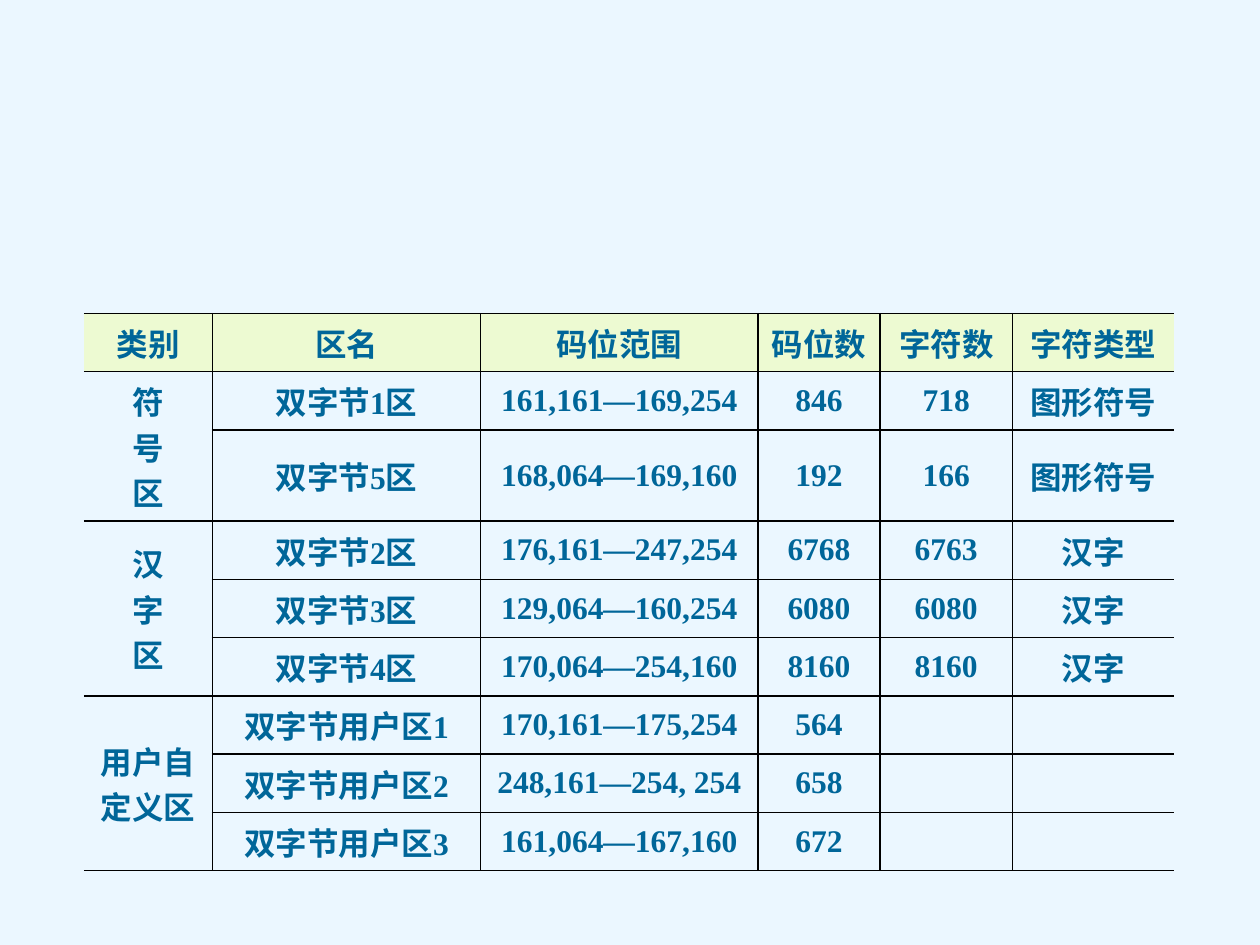
from lxml.etree import SubElement
from pptx import Presentation
from pptx.dml.color import RGBColor
from pptx.enum.text import MSO_ANCHOR, PP_ALIGN
from pptx.oxml.ns import qn
from pptx.util import Cm, Pt

BACKGROUND = RGBColor(0xEB, 0xF7, 0xFF)
HEADER_FILL = RGBColor(0xED, 0xFA, 0xD2)
TEXT_COLOR = RGBColor(0x00, 0x66, 0x99)
LINE_COLOR = RGBColor(0x00, 0x00, 0x00)
FONT_NAME = "Times New Roman"

COLUMN_WIDTHS = [2.59, 5.41, 5.59, 2.46, 2.67, 3.25]
ROW_HEIGHT = 1.01
TALL_ROW, TALL_ROW_HEIGHT = 2, 1.52
HANGING_INDENT = Cm(0.95)

HEADERS = ["类别", "区名", "码位范围", "码位数", "字符数", "字符类型"]
# Each category: its lines of text, then the zones that it spans.
CATEGORIES = [
    (["符", "号", "区"], [
        ["双字节1区", "161,161—169,254", "846", "718", "图形符号"],
        ["双字节5区", "168,064—169,160", "192", "166", "图形符号"],
    ]),
    (["汉", "字", "区"], [
        ["双字节2区", "176,161—247,254", "6768", "6763", "汉字"],
        ["双字节3区", "129,064—160,254", "6080", "6080", "汉字"],
        ["双字节4区", "170,064—254,160", "8160", "8160", "汉字"],
    ]),
    (["用户自", "定义区"], [
        ["双字节用户区1", "170,161—175,254", "564", "", ""],
        ["双字节用户区2", "248,161—254, 254", "658", "", ""],
        ["双字节用户区3", "161,064—167,160", "672", "", ""],
    ]),
]


def add_border(cell, side, visible):
    properties = cell._tc.get_or_add_tcPr()
    line = SubElement(properties, qn(f"a:ln{side}"), w=str(Pt(1)))
    if visible:
        fill = SubElement(line, qn("a:solidFill"))
        SubElement(fill, qn("a:srgbClr"), val=str(LINE_COLOR))
    else:
        SubElement(line, qn("a:noFill"))


def write_lines(cell, lines):
    """Write one centred paragraph per line of text."""
    cell.vertical_anchor = MSO_ANCHOR.MIDDLE
    text_frame = cell.text_frame
    for index, text in enumerate(lines):
        paragraph = text_frame.add_paragraph() if index else text_frame.paragraphs[0]
        paragraph.alignment = PP_ALIGN.CENTER
        properties = paragraph._p.get_or_add_pPr()
        properties.set("marL", str(HANGING_INDENT))
        properties.set("indent", str(-HANGING_INDENT))
        run = paragraph.add_run()
        run.text = text
        run.font.name = FONT_NAME
        run.font.size = Pt(18)
        run.font.bold = True
        run.font.color.rgb = TEXT_COLOR


def format_cells(table):
    """Rule every cell, leaving the table's left and right sides open."""
    last_column = len(table.columns) - 1
    for row_index, row in enumerate(table.rows):
        for column_index, cell in enumerate(row.cells):
            add_border(cell, "L", column_index > 0)
            add_border(cell, "R", column_index < last_column)
            add_border(cell, "T", True)
            add_border(cell, "B", True)
            if row_index == 0:
                cell.fill.solid()
                cell.fill.fore_color.rgb = HEADER_FILL
            else:
                cell.fill.background()


def fill_table(table):
    for column, header in enumerate(HEADERS):
        write_lines(table.cell(0, column), [header])
    row = 1
    for category_lines, zones in CATEGORIES:
        category_cell = table.cell(row, 0)
        category_cell.merge(table.cell(row + len(zones) - 1, 0))
        write_lines(category_cell, category_lines)
        for zone in zones:
            for column, text in enumerate(zone, start=1):
                if text:
                    write_lines(table.cell(row, column), [text])
            row += 1


def add_code_table(slide):
    row_count = 1 + sum(len(zones) for _, zones in CATEGORIES)
    heights = [ROW_HEIGHT] * row_count
    heights[TALL_ROW] = TALL_ROW_HEIGHT
    frame = slide.shapes.add_table(
        row_count, len(HEADERS), Cm(1.69), Cm(6.32),
        Cm(sum(COLUMN_WIDTHS)), Cm(sum(heights)))
    table = frame.table
    table.first_row = False
    table.horz_banding = False
    for column, width in zip(table.columns, COLUMN_WIDTHS):
        column.width = Cm(width)
    for row, height in zip(table.rows, heights):
        row.height = Cm(height)
    format_cells(table)
    fill_table(table)


def main():
    presentation = Presentation()
    presentation.slide_width = Cm(25.4)
    presentation.slide_height = Cm(19.05)
    slide = presentation.slides.add_slide(presentation.slide_layouts[6])
    slide.background.fill.solid()
    slide.background.fill.fore_color.rgb = BACKGROUND
    add_code_table(slide)
    presentation.save("out.pptx")


if __name__ == "__main__":
    main()
